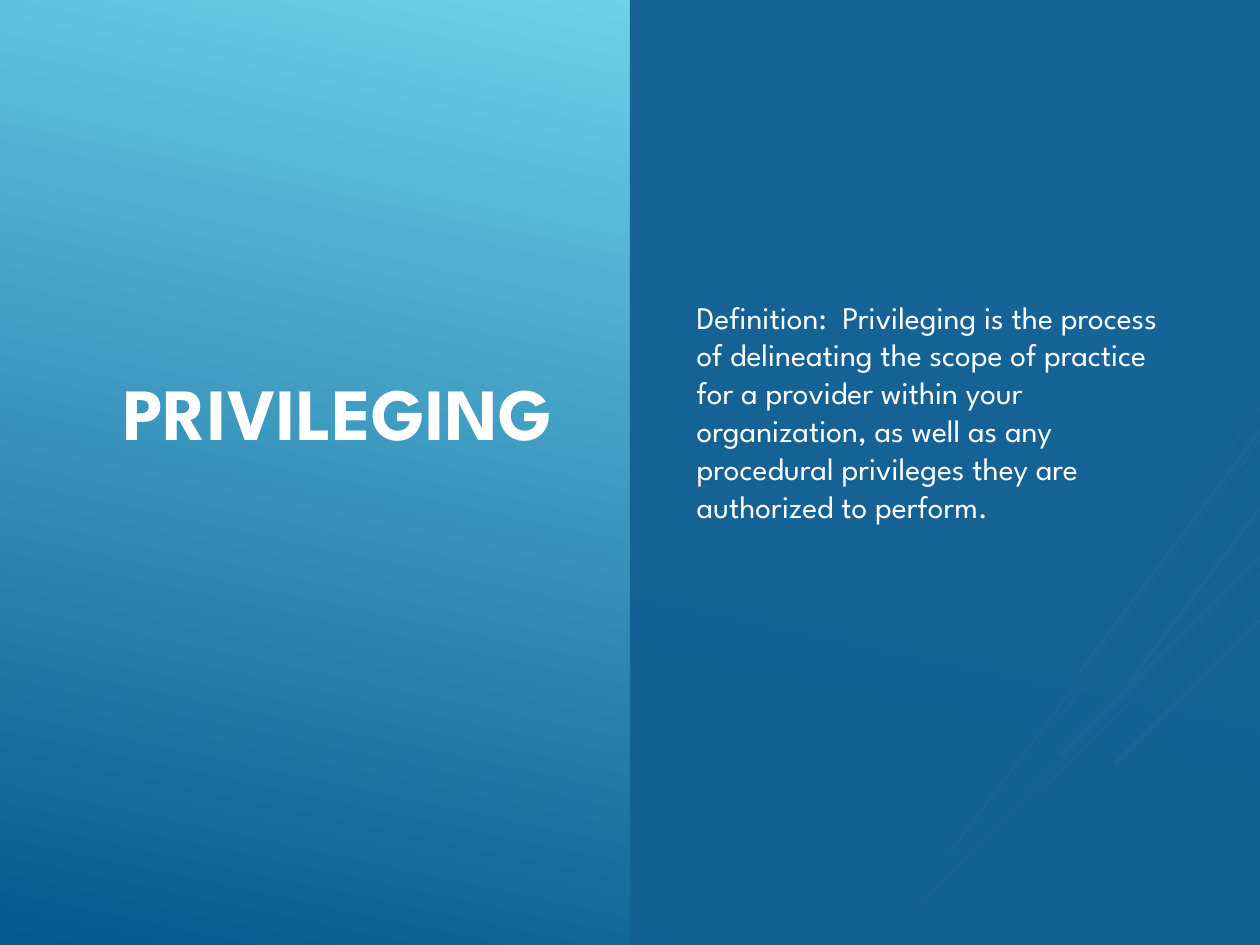
from lxml import etree
from pptx import Presentation
from pptx.dml.color import RGBColor
from pptx.enum.shapes import MSO_CONNECTOR, MSO_SHAPE
from pptx.enum.text import MSO_ANCHOR, MSO_AUTO_SIZE, PP_ALIGN
from pptx.oxml.ns import qn
from pptx.util import Pt

STRAIGHT = MSO_CONNECTOR.STRAIGHT
RECTANGLE = MSO_SHAPE.RECTANGLE
MIDDLE = MSO_ANCHOR.MIDDLE
NO_FIT = MSO_AUTO_SIZE.NONE
LEFT, RIGHT = PP_ALIGN.LEFT, PP_ALIGN.RIGHT

WHITE = RGBColor(0xFF, 0xFF, 0xFF)
SKY = RGBColor(0x6E, 0xD2, 0xEB)
DEEP_BLUE = RGBColor(0x06, 0x58, 0x8E)
PANEL_BLUE = RGBColor(0x14, 0x61, 0x94)

FONT = "League Spartan"
PX_PER_INCH = 126
WIDTH, HEIGHT = 1260, 945
THIN, THICK = 0.75, 2.25

DEFINITION = (
    "Definition:  Privileging is the process of delineating the scope of "
    "practice for a provider within your organization, as well as any "
    "procedural privileges they are authorized to perform."
)

# Diagonal rays: start x, start y, end x, end y, weight
RAYS = [
    # shallow fan
    (1260, 537, 1155, 641, THIN),
    (1260, 562, 920, 903, THIN),
    (1260, 573, 1043, 790, THIN),
    (1259, 557, 1061, 755, THICK),
    (1259, 620, 1115, 764, THICK),
    # steep fan
    (1260, 408, 1166, 534, THIN),
    (1260, 440, 951, 851, THIN),
    (1260, 452, 1063, 714, THIN),
    (1260, 431, 1080, 672, THICK),
    (1260, 508, 1129, 683, THICK),
]


def px(length):
    return round(length * 914400 / PX_PER_INCH)


class SlideBuilder:
    def __init__(self, deck, page):
        self.deck = deck
        self.page = page

    def background(self, top, bottom, angle):
        fill = self.page.background.fill
        fill.gradient()
        fill.gradient_angle = angle
        for stop, position, color in zip(fill.gradient_stops, (0.1, 1), (top, bottom)):
            stop.position = position
            stop.color.rgb = color

    def ray(self, x1, y1, x2, y2, weight):
        line = self.page.shapes.add_connector(STRAIGHT, px(x1), px(y1), px(x2), px(y2))
        line.line.color.rgb = WHITE
        line.line.width = Pt(weight)
        etree.SubElement(line._element.spPr, qn("a:effectLst"))

    def panel(self, left, top, width, height, color, opacity):
        box = self.page.shapes.add_shape(
            RECTANGLE, px(left), px(top), px(width), px(height))
        box.shadow.inherit = False
        box.line.fill.background()
        box.fill.solid()
        box.fill.fore_color.rgb = color
        solid = box._element.spPr.find(qn("a:solidFill"))
        etree.SubElement(solid[0], qn("a:alpha"), val=str(opacity * 1000))

    def placeholder(self, index, text, area, para_format, font_format):
        box = self.page.placeholders[index]
        box.left, box.top, box.width, box.height = map(px, area)
        # Bring it in front of everything drawn so far
        self.page.shapes._spTree.append(box._element)
        frame = box.text_frame
        for name, value in dict(
            word_wrap=True, auto_size=NO_FIT, vertical_anchor=MIDDLE
        ).items():
            setattr(frame, name, value)
        para = frame.paragraphs[0]
        for name, value in para_format.items():
            setattr(para, name, value)
        span = para.add_run()
        span.text = text
        for name, value in dict(name=FONT, **font_format).items():
            setattr(span.font, name, value)
        span.font.color.rgb = WHITE
        return para

    def plain_body(self, *args):
        properties = self.placeholder(*args)._p.get_or_add_pPr()
        properties.set("marL", "0")
        properties.set("indent", "0")
        etree.SubElement(properties, qn("a:buNone"))


def main():
    deck = Presentation()
    deck.slide_width, deck.slide_height = px(WIDTH), px(HEIGHT)
    page = deck.slides.add_slide(deck.slide_layouts[1])
    builder = SlideBuilder(deck, page)

    # Backdrop; the angle runs counter-clockwise
    builder.background(SKY, DEEP_BLUE, 360 - 102)
    for ray in RAYS:
        builder.ray(*ray)

    # Left half: title
    builder.placeholder(
        0, "PRIVILEGING", (67, 94, 498, 634),
        dict(alignment=RIGHT), dict(size=Pt(42), bold=True))

    # Right half: definition on a panel
    builder.panel(WIDTH // 2, 0, WIDTH // 2, HEIGHT, PANEL_BLUE, 97)
    builder.plain_body(
        1, DEFINITION, (684, 94, 504, 634),
        dict(alignment=LEFT, space_after=Pt(6)), dict(size=Pt(18)))

    deck.save("out.pptx")


if __name__ == "__main__":
    main()
